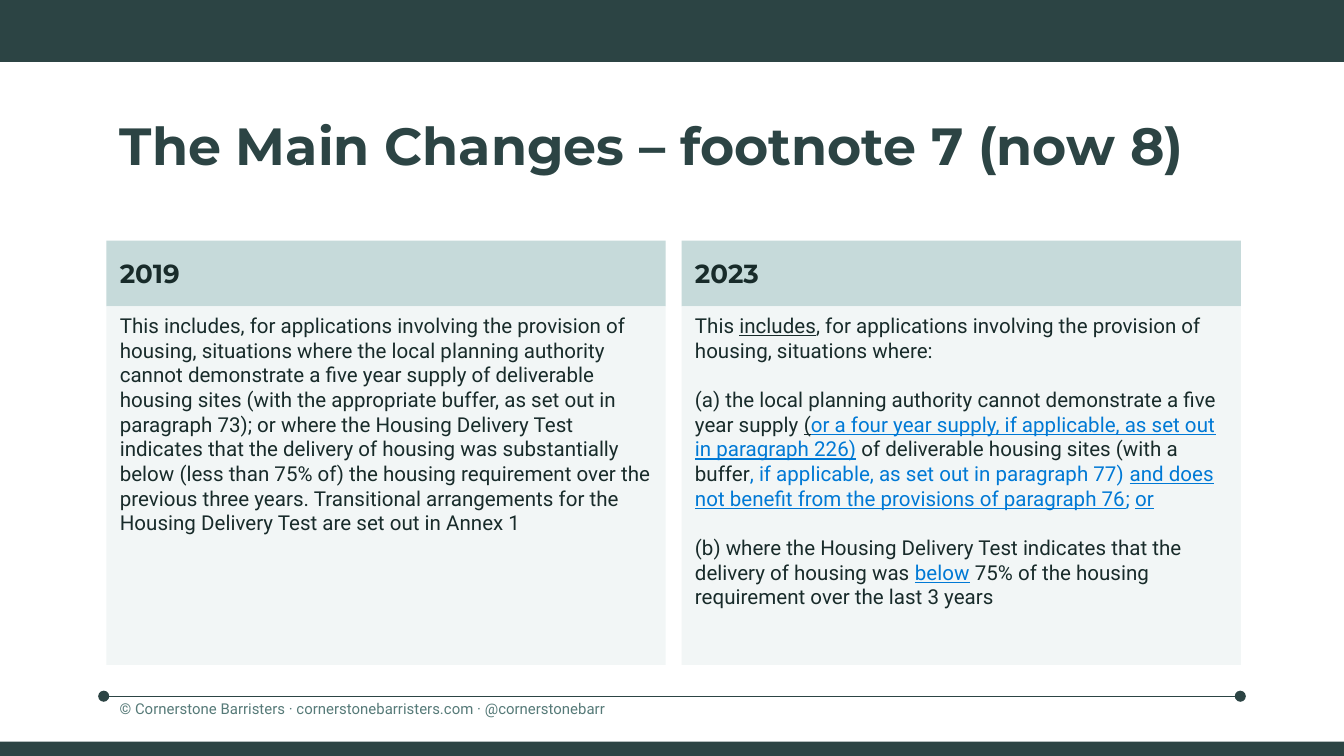
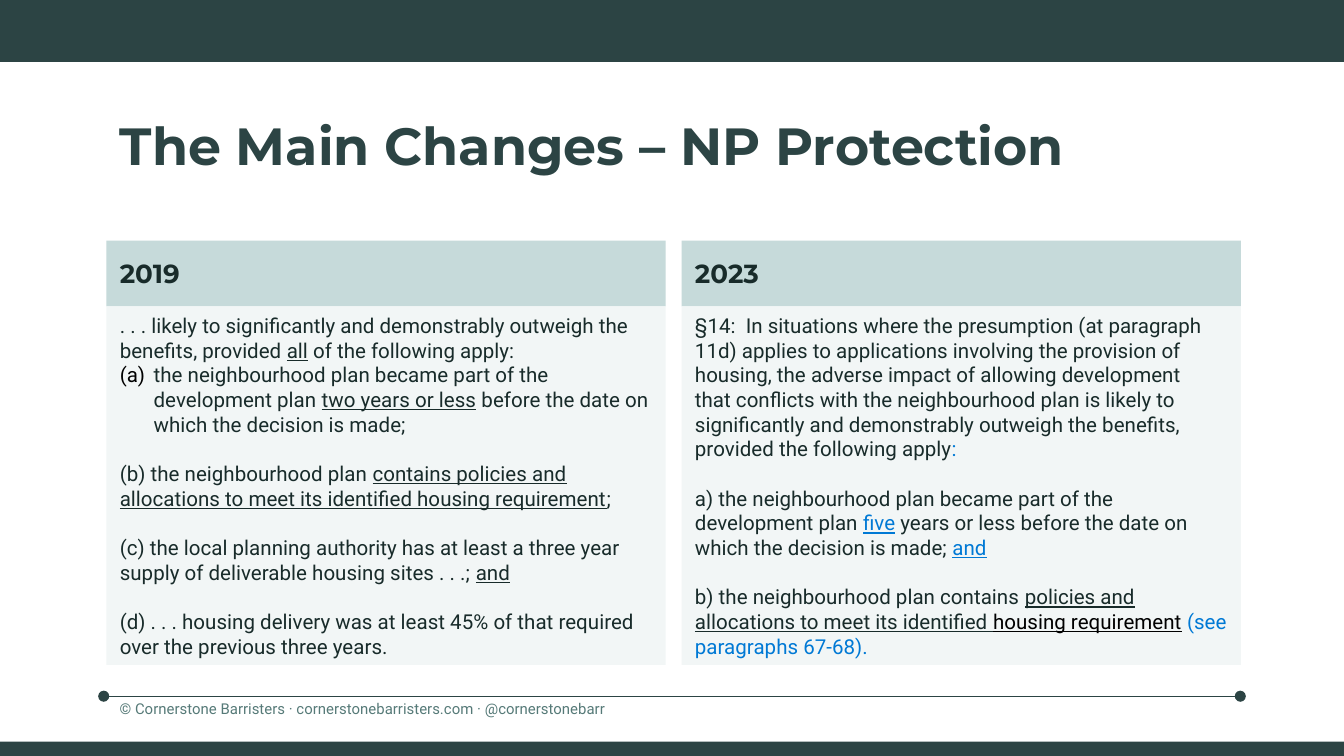
from lxml import etree
from pptx import Presentation
from pptx.dml.color import RGBColor
from pptx.enum import shapes, text
from pptx.oxml import ns
from pptx.util import Cm, Pt

PINE = RGBColor(0x2C, 0x44, 0x44)
INK = RGBColor(0x18, 0x2B, 0x2A)
SAGE = RGBColor(0x56, 0x7A, 0x78)
MINT = RGBColor(0xC6, 0xDA, 0xDA)
MIST = RGBColor(0xF2, 0xF6, 0xF6)
BLUE = RGBColor(0x00, 0x79, 0xD5)
BLACK = RGBColor(0, 0, 0)
HEAD, BODY = "Montserrat", "Roboto"

WIDE, HIGH = 25.4, 14.29
LEFT, SPAN = 2.01, 21.44
COL, GUTTER = 10.57, 0.3
LINE = Pt(13.2)
FOOT = "© Cornerstone Barristers · cornerstonebarristers.com · @cornerstonebarr"


def under(words, ink=INK):
    return words, dict(line=True, ink=ink)


def blue(words):
    return words, dict(ink=BLUE)


def new(words):
    """Added wording: blue and underlined."""
    return under(words, BLUE)


def par(*runs, gap=True, num=False):
    """One paragraph; gap leaves a line free above, num numbers it (a)."""
    return runs, gap, num


def write(para, words, font=BODY, size=11, ink=INK, bold=False, line=False):
    run = para.add_run()
    run.text = words
    face = run.font
    face.name, face.size, face.bold, face.underline = font, Pt(size), bold, line
    face.color.rgb = ink


def mark(para, num):
    """Set the indent and the numbering, or clear the template's bullet."""
    props = para._p.get_or_add_pPr()
    props.set("marL", str(Cm(0.64) if num else 0))
    props.set("indent", str(Cm(-0.64) if num else 0))
    if num:
        tint = etree.SubElement(props, ns.qn("a:buClr"))
        etree.SubElement(tint, ns.qn("a:srgbClr"), val=str(BLACK))
        etree.SubElement(props, ns.qn("a:buFont"), typeface=BODY)
        etree.SubElement(props, ns.qn("a:buAutoNum"), type="alphaLcParenBoth")
    else:
        etree.SubElement(props, ns.qn("a:buNone"))


class Deck:
    def __init__(self):
        self.show = Presentation()
        self.show.slide_width, self.show.slide_height = Cm(WIDE), Cm(HIGH)
        self.page = None

    def start(self, title):
        layout = self.show.slide_layouts.get_by_name("Comparison")
        self.page = self.show.slides.add_slide(layout)
        self.band(0, 1.17)
        self.band(14.02, HIGH - 14.02)
        self.rule(13.16)
        self.foot()
        self.label(0, (LEFT, 2.01, SPAN, 1.47), title, size=28, ink=PINE)

    def band(self, top, high):
        box = self.page.shapes.add_shape(
            shapes.MSO_SHAPE.RECTANGLE, 0, Cm(top), Cm(WIDE), Cm(high))
        box.shadow.inherit = False
        box.fill.solid()
        box.fill.fore_color.rgb = PINE
        box.line.fill.background()

    def rule(self, top):
        bar = self.page.shapes.add_connector(
            shapes.MSO_CONNECTOR.STRAIGHT, Cm(1.96), Cm(top), Cm(23.44), Cm(top))
        bar.line.color.rgb = PINE
        bar.line.width = Pt(0.75)
        stroke = bar.line._get_or_add_ln()
        for end in ("a:headEnd", "a:tailEnd"):
            etree.SubElement(stroke, ns.qn(end), type="oval")
        etree.SubElement(bar._element.spPr, ns.qn("a:effectLst"))

    def foot(self):
        box = self.page.shapes.add_textbox(
            Cm(LEFT), Cm(13.06), Cm(12.57), Cm(0.79))
        frame = box.text_frame
        frame.word_wrap = True
        frame.margin_top = frame.margin_bottom = Cm(0.25)
        write(frame.paragraphs[0], FOOT, size=8, ink=SAGE)

    def place(self, slot, area, fill=None, anchor=text.MSO_ANCHOR.TOP):
        """Move a placeholder and return its text frame."""
        box = self.page.placeholders[slot]
        box.left, box.top, box.width, box.height = map(Cm, area)
        if fill is not None:
            box.fill.solid()
            box.fill.fore_color.rgb = fill
        frame = box.text_frame
        frame.auto_size = text.MSO_AUTO_SIZE.NONE
        frame.word_wrap = True
        frame.vertical_anchor = anchor
        return frame

    def label(self, slot, area, words, size, ink=INK, **look):
        para = self.place(slot, area, **look).paragraphs[0]
        para.alignment = text.PP_ALIGN.LEFT
        para.space_before = Pt(0)
        write(para, words, font=HEAD, size=size, ink=ink, bold=True)

    def column(self, spot, year, pars):
        left = LEFT + spot * (COL + GUTTER)
        slot = 1 + 2 * spot
        self.label(slot, (left, 4.55, COL, 1.24), year, size=14,
                   fill=MINT, anchor=text.MSO_ANCHOR.MIDDLE)
        frame = self.place(slot + 1, (left, 5.79, COL, 6.78), fill=MIST)
        for i, (runs, gap, num) in enumerate(pars):
            para = frame.add_paragraph() if i else frame.paragraphs[0]
            mark(para, num)
            para.line_spacing = LINE
            para.space_before = LINE if gap and i else Pt(0)
            for run in runs:
                words, style = (run, {}) if isinstance(run, str) else run
                write(para, words, **style)


SLIDES = [
    ("The Main Changes – footnote 7 (now 8)", {
        "2019": [
            par("This includes, for applications involving the provision of housing, "
                "situations where the local planning authority cannot demonstrate a five "
                "year supply of deliverable housing sites (with the appropriate buffer, as "
                "set out in paragraph 73); or where the Housing Delivery Test indicates "
                "that the delivery of housing was substantially below (less than 75% of) "
                "the housing requirement over the previous three years. Transitional "
                "arrangements for the Housing Delivery Test are set out in Annex 1")],
        "2023": [
            par("This ", under("includes"), ", for applications involving the provision "
                "of housing, situations where:"),
            par("(a) the local planning authority cannot demonstrate a five year supply ",
                under("("),
                new("or a four year supply, if applicable, as set out in paragraph 226)"),
                " of deliverable housing sites (with a buffer",
                blue(", if applicable, as set out in paragraph 77) "),
                new("and does not benefit from the provisions of paragraph 76"),
                blue("; "), new("or")),
            par("(b) where the Housing Delivery Test indicates that the delivery of "
                "housing was ", new("below"),
                " 75% of the housing requirement over the last 3 years")],
    }),
    ("The Main Changes – NP Protection", {
        "2019": [
            par(". . . likely to significantly and demonstrably outweigh the benefits, "
                "provided ", under("all"), " of the following apply:"),
            par("the neighbourhood plan became part of the development plan ",
                under("two years or less"),
                " before the date on which the decision is made;", gap=False, num=True),
            par("(b) the neighbourhood plan ",
                under("contains policies and allocations to meet its identified housing "
                      "requirement"), ";"),
            par("(c) the local planning authority has at least a three year supply of "
                "deliverable housing sites . . .; ", under("and")),
            par("(d) . . . housing delivery was at least 45% of that required over the "
                "previous three years.")],
        "2023": [
            par("§14:  In situations where the presumption (at paragraph 11d) applies to "
                "applications involving the provision of housing, the adverse impact of "
                "allowing development"),
            par("that conflicts with the neighbourhood plan is likely to significantly "
                "and demonstrably outweigh the benefits, provided the following apply",
                blue(":"), gap=False),
            par("a) the neighbourhood plan became part of the development plan ",
                new("five"), " years or less before the date on which the decision is "
                "made; ", new("and")),
            par("b) the neighbourhood plan contains ",
                under("policies and allocations to meet its identified "),
                under("housing requirement", BLACK), " ",
                blue("(see paragraphs 67-68)."))],
    }),
]


def main():
    deck = Deck()
    for title, sides in SLIDES:
        deck.start(title)
        for spot, (year, pars) in enumerate(sides.items()):
            deck.column(spot, year, pars)
    deck.show.save("out.pptx")


if __name__ == "__main__":
    main()
